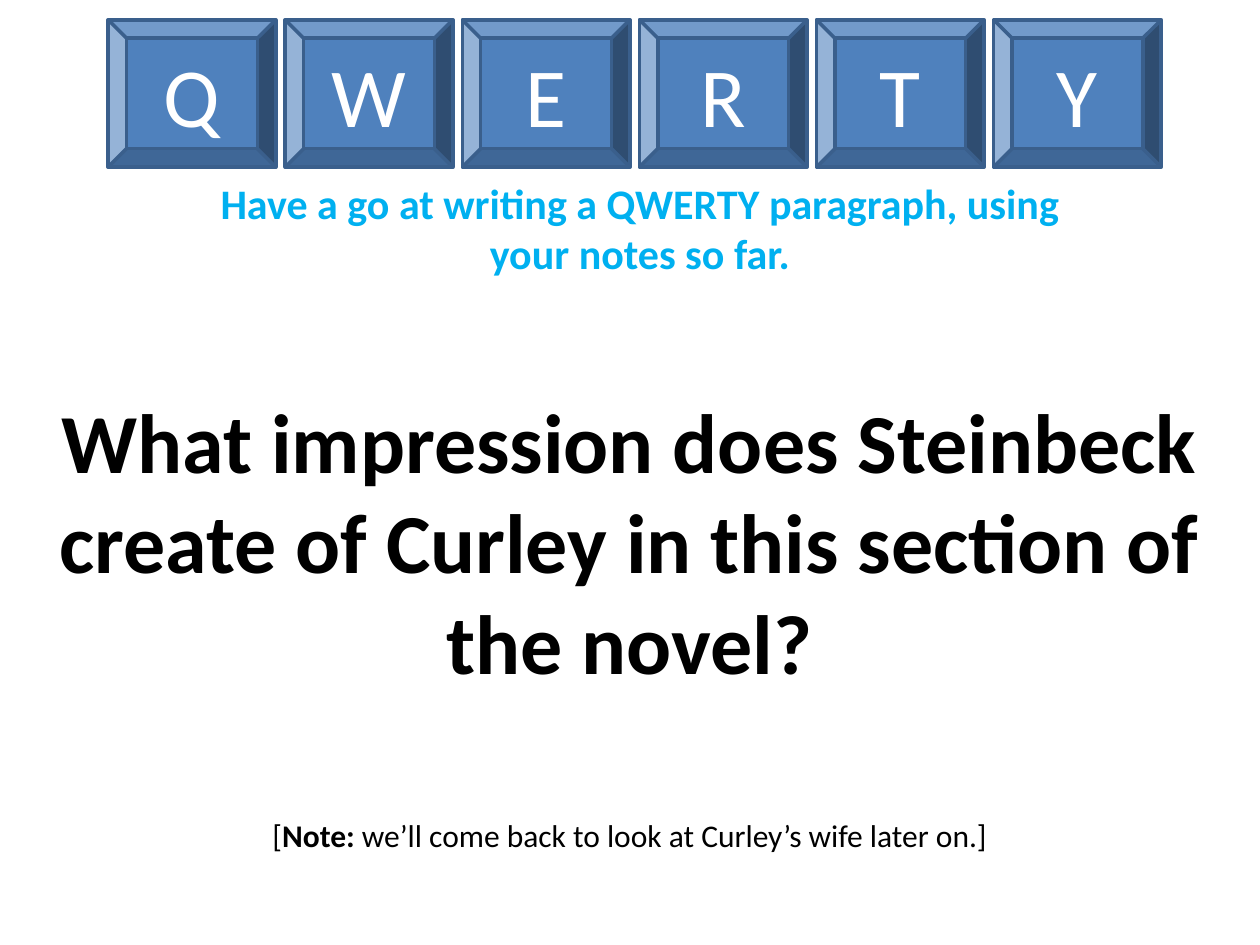
from pptx import Presentation
from pptx.dml.color import RGBColor
from pptx.enum.shapes import MSO_SHAPE
from pptx.enum.text import MSO_ANCHOR, PP_ALIGN
from pptx.util import Cm, Pt

COLORS = {
    "key": "4F81BD",
    "key_edge": "3A5F8C",
    "letter": "FFFFFF",
    "task": "00B0F0",
    "text": "000000",
}


def color(name):
    return RGBColor.from_string(COLORS[name])


def write(shape, spans, size, color_name):
    """Fill a shape with one centred paragraph of (text, bold) spans."""
    shape.text_frame.word_wrap = True
    para = shape.text_frame.paragraphs[0]
    para.alignment = PP_ALIGN.CENTER
    para.font.name = "Calibri"
    para.font.size = Pt(size)
    para.font.color.rgb = color(color_name)
    for text, bold in spans:
        span = para.add_run()
        span.text = text
        span.font.bold = bold


deck = Presentation()
deck.slide_width, deck.slide_height = Cm(25.4), Cm(19.05)
page = deck.slides.add_slide(deck.slide_layouts[6])

# Row of keyboard keys
key_left, key_pitch = 2.18, 3.57
for index, letter in enumerate("QWERTY"):
    key = page.shapes.add_shape(
        MSO_SHAPE.BEVEL, Cm(key_left + index * key_pitch), Cm(0.4), Cm(3.38), Cm(2.97)
    )
    key.shadow.inherit = False
    key.fill.solid()
    key.fill.fore_color.rgb = color("key")
    key.line.color.rgb = color("key_edge")
    key.line.width = Pt(2)
    key.text_frame.vertical_anchor = MSO_ANCHOR.MIDDLE
    write(key, [(letter, False)], 48, "letter")

# Task, question and note
task = [("Have a go at writing a QWERTY paragraph, using your notes so far.", True)]
question = [
    ("What impression does Steinbeck create of Curley in this section of the novel?", True)
]
note = [
    ("[", False),
    ("Note: ", True),
    ("we’ll come back to look at Curley’s wife later on.]", False),
]
for left, top, width, height, spans, size, color_name in [
    (3.58, 3.45, 18.64, 3.33, task, 24, "task"),
    (0.89, 7.72, 23.6, 6.4, question, 48, "text"),
    (1.5, 16.33, 22.4, 1.02, note, 18, "text"),
]:
    box = page.shapes.add_textbox(Cm(left), Cm(top), Cm(width), Cm(height))
    write(box, spans, size, color_name)

deck.save("out.pptx")
